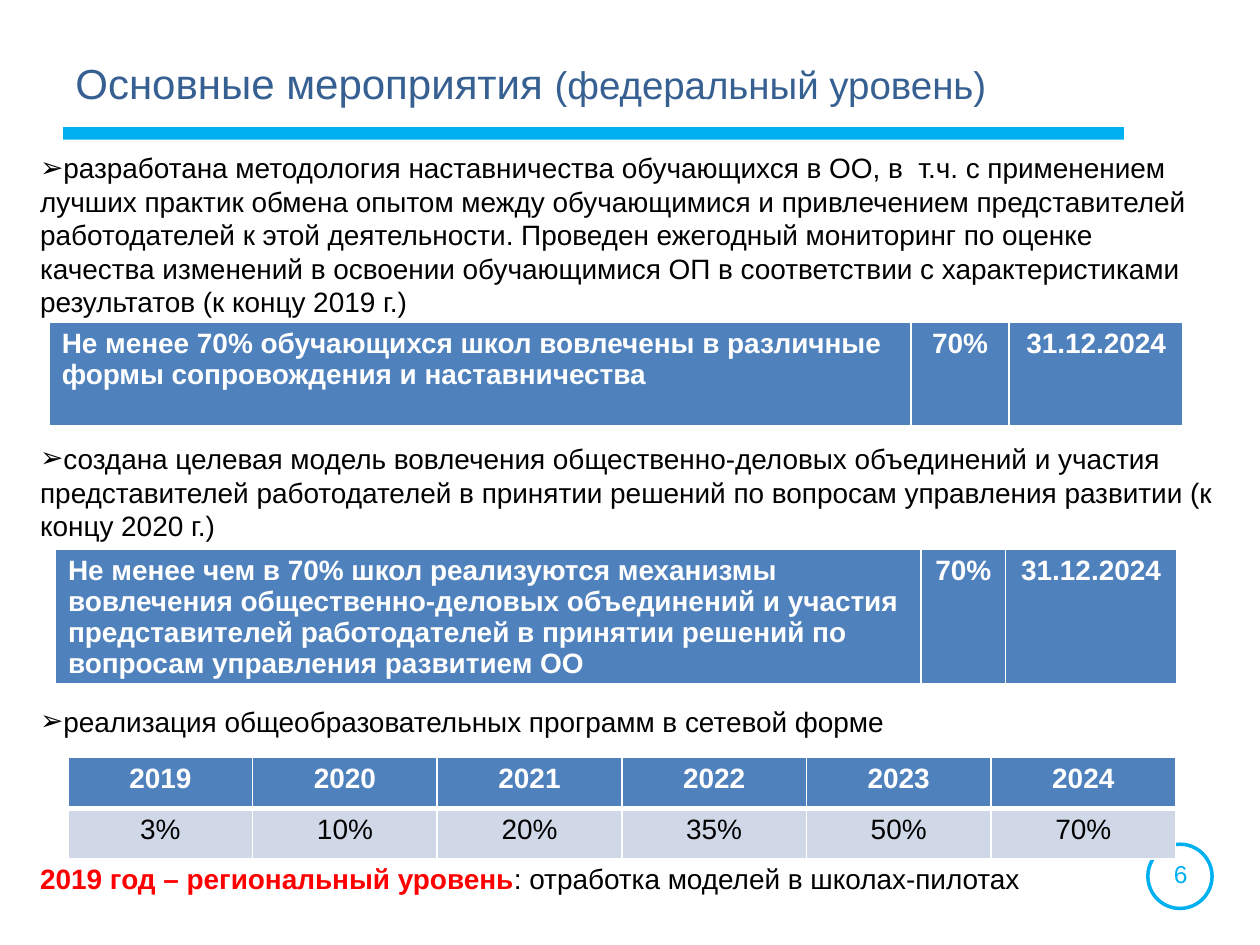
from lxml.etree import SubElement
from pptx import Presentation
from pptx.dml.color import RGBColor
from pptx.enum.shapes import MSO_SHAPE as Preset
from pptx.enum.text import MSO_ANCHOR as Anchor, PP_ALIGN as Align
from pptx.oxml.ns import qn
from pptx.util import Inches, Pt

CYAN, NAVY, BLUE, PALE = "00B0F0", "376092", "4F81BD", "D0D8E8"
BLACK, WHITE, RED = "000000", "FFFFFF", "FF0000"

ACTIVITIES = [
    ("разработана методология наставничества обучающихся в ОО, в  т.ч. с применением "
     "лучших практик обмена опытом между обучающимися и привлечением представителей "
     "работодателей к этой деятельности. Проведен ежегодный мониторинг по оценке "
     "качества изменений в освоении обучающимися ОП в соответствии с "
     "характеристиками результатов (к концу 2019 г.)", 0),
    ("создана целевая модель вовлечения общественно-деловых объединений и участия "
     "представителей работодателей в принятии решений по вопросам управления "
     "развитии (к концу 2020 г.)", 70.6),
    ("реализация общеобразовательных программ в сетевой форме", 92.9),
]
MENTORING = [["Не менее 70% обучающихся школ вовлечены в различные формы "
              "сопровождения и наставничества", "70%", "31.12.2024"]]
GOVERNANCE = [["Не менее чем в 70% школ реализуются механизмы вовлечения "
               "общественно-деловых объединений и участия представителей "
               "работодателей в принятии решений по вопросам управления "
               "развитием ОО", "70%", "31.12.2024"]]
NETWORK = [["2019", "2020", "2021", "2022", "2023", "2024"],
           ["3%", "10%", "20%", "35%", "50%", "70%"]]


def rgb(hex_color):
    """Turn a hex string into a colour."""
    return RGBColor.from_string(hex_color)


def add_run(paragraph, text, size, color, bold=False):
    """Append a formatted run to a paragraph."""
    run = paragraph.add_run()
    run.text = text
    run.font.name = "Arial"
    run.font.size = Pt(size)
    run.font.bold = bold
    run.font.color.rgb = rgb(color)


def add_text_frame(slide, left, top, width, height, anchor=Anchor.TOP):
    """Add a wrapping text box and return its text frame."""
    box = slide.shapes.add_textbox(Inches(left), Inches(top), Inches(width), Inches(height))
    box.text_frame.word_wrap = True
    box.text_frame.vertical_anchor = anchor
    return box.text_frame


def add_preset(slide, preset, left, top, width, height, fill=None, line=None):
    """Add a plain shape with a fill or an outline."""
    shape = slide.shapes.add_shape(
        preset, Inches(left), Inches(top), Inches(width), Inches(height))
    shape.shadow.inherit = False
    if fill:
        shape.fill.solid()
        shape.fill.fore_color.rgb = rgb(fill)
    else:
        shape.fill.background()
    if line:
        shape.line.color.rgb = rgb(line)
        shape.line.width = Pt(2)
    else:
        shape.line.fill.background()


def add_arrow_bullet(paragraph):
    """Give a paragraph an arrowhead bullet without a hanging indent."""
    properties = paragraph._p.get_or_add_pPr()
    properties.set("marL", "0")
    properties.set("indent", "0")
    SubElement(properties, qn("a:buFont"), typeface="Arial")
    SubElement(properties, qn("a:buChar"), char="➢")


def set_borders(cell, bottom):
    """Draw white cell borders with the given bottom width in points."""
    properties = cell._tc.get_or_add_tcPr()
    for position, (side, width) in enumerate(
            [("lnL", 1), ("lnR", 1), ("lnT", 1), ("lnB", bottom)]):
        border = properties.makeelement(qn(f"a:{side}"), {"w": str(Pt(width))})
        fill = SubElement(border, qn("a:solidFill"))
        SubElement(fill, qn("a:srgbClr"), val=WHITE)
        properties.insert(position, border)


def add_grid(slide, rows, left, top, columns, row_height):
    """Add a table whose first row is a blue header."""
    table = slide.shapes.add_table(
        len(rows), len(columns), Inches(left), Inches(top),
        Inches(sum(columns)), Inches(row_height * len(rows))).table
    for column, width in zip(table.columns, columns):
        column.width = Inches(width)
    for row_index, row in enumerate(rows):
        header = row_index == 0
        for column_index, text in enumerate(row):
            cell = table.cell(row_index, column_index)
            cell.fill.solid()
            cell.fill.fore_color.rgb = rgb(BLUE if header else PALE)
            set_borders(cell, 3 if header else 1)
            paragraph = cell.text_frame.paragraphs[0]
            is_goal = len(text) > 10
            paragraph.alignment = Align.LEFT if is_goal else Align.CENTER
            paragraph.line_spacing = Pt(17.65)
            add_run(paragraph, text, 16, WHITE if header else BLACK, header)


def add_activities(slide):
    """Add the bulleted activities and the closing regional line."""
    frame = add_text_frame(slide, 0.22, 1.15, 9.51, 6.35)
    for index, (text, gap) in enumerate(ACTIVITIES):
        activity = frame.add_paragraph() if index else frame.paragraphs[0]
        activity.line_spacing = Pt(19.1)
        if gap:
            activity.space_before = Pt(gap)
        add_arrow_bullet(activity)
        add_run(activity, text, 16, BLACK)
    regional = frame.add_paragraph()
    regional.line_spacing = Pt(19.1)
    regional.space_before = Pt(70.6)
    add_run(regional, "2019 год – региональный уровень", 16, RED, True)
    add_run(regional, ": отработка моделей в школах-пилотах", 16, BLACK)


def main():
    """Build and save the slide."""
    deck = Presentation()
    deck.slide_width, deck.slide_height = Inches(10), Inches(7.5)
    slide = deck.slides.add_slide(deck.slide_layouts[6])

    add_preset(slide, Preset.RECTANGLE, 0.5, 1.01, 8.42, 0.1, fill=CYAN)
    add_preset(slide, Preset.OVAL, 9.11, 6.7, 0.51, 0.51, line=CYAN)
    page = add_text_frame(slide, 9.08, 6.77, 0.58, 0.34).paragraphs[0]
    page.alignment = Align.CENTER
    add_run(page, "6", 14, CYAN)

    title = add_text_frame(slide, 0.5, 0.3, 8.35, 0.71, Anchor.MIDDLE).paragraphs[0]
    add_run(title, "Основные мероприятия ", 24, NAVY)
    add_run(title, "(федеральный уровень)", 22, NAVY)

    add_activities(slide)
    add_grid(slide, MENTORING, 0.39, 2.56, [6.84, 0.78, 1.38], 0.83)
    add_grid(slide, GOVERNANCE, 0.44, 4.36, [6.87, 0.67, 1.36], 1.07)
    add_grid(slide, NETWORK, 0.54, 6.01, [1.465] * 6, 0.405)
    deck.save("out.pptx")


if __name__ == "__main__":
    main()
